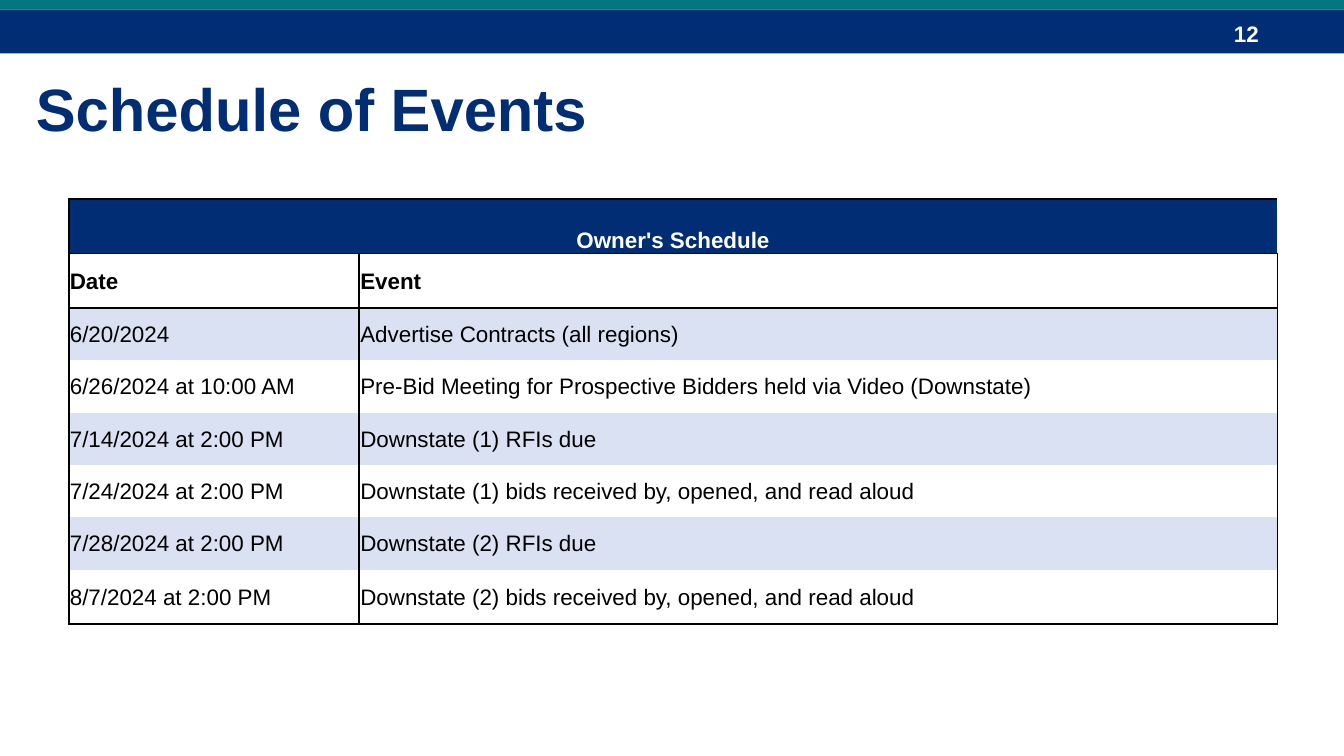
import pptx
import pptx.dml.color
import pptx.enum.shapes
import pptx.enum.text
import pptx.oxml.ns
import pptx.util
from lxml import etree
from pptx.util import Cm

COLORS = {
    "navy": "002D73",
    "teal": "007681",
    "white": "FFFFFF",
    "black": "000000",
    "band": "D9E1F2",
}
FONT = "Arial"
SLIDE_WIDTH, SLIDE_HEIGHT = Cm(25.4), Cm(14.29)
COLUMN_WIDTHS = (5.49, 17.35)
TALL_ROW, EVENT_ROW = 1.03, 0.99

TABLE_TITLE = "Owner's Schedule"
HEADINGS = ("Date", "Event")
EVENTS = [
    ("6/20/2024", "Advertise Contracts (all regions)"),
    ("6/26/2024 at 10:00 AM",
     "Pre-Bid Meeting for Prospective Bidders held via Video (Downstate)"),
    ("7/14/2024 at 2:00 PM", "Downstate (1) RFIs due"),
    ("7/24/2024 at 2:00 PM",
     "Downstate (1) bids received by, opened, and read aloud"),
    ("7/28/2024 at 2:00 PM", "Downstate (2) RFIs due"),
    ("8/7/2024 at 2:00 PM",
     "Downstate (2) bids received by, opened, and read aloud"),
]


def rgb(color):
    return pptx.dml.color.RGBColor.from_string(COLORS[color])


def add_run(paragraph, text, size, color, bold=False):
    run = paragraph.add_run()
    run.text = text
    run.font.name = FONT
    run.font.size = pptx.util.Pt(size)
    run.font.bold = bold
    run.font.color.rgb = rgb(color)


def add_bar(slide, top, height, color):
    """Draw a plain band across the full slide width."""
    bar = slide.shapes.add_shape(
        pptx.enum.shapes.MSO_SHAPE.RECTANGLE, 0, Cm(top), SLIDE_WIDTH, Cm(height))
    bar.shadow.inherit = False
    bar.fill.solid()
    bar.fill.fore_color.rgb = rgb(color)
    bar.line.fill.background()


def add_label(slide, left, top, width, height, text, size, color):
    label = slide.shapes.add_textbox(Cm(left), Cm(top), Cm(width), Cm(height))
    frame = label.text_frame
    frame.word_wrap = True
    frame.vertical_anchor = pptx.enum.text.MSO_ANCHOR.MIDDLE
    add_run(frame.paragraphs[0], text, size, color, bold=True)


def set_borders(cell, sides):
    """Rule the given sides (letters of LRTB) in black and clear the others."""
    properties = cell._tc.get_or_add_tcPr()
    qn = pptx.oxml.ns.qn
    for side in "LRTB":
        line = etree.SubElement(properties, qn(f"a:ln{side}"), w="12700")
        if side in sides:
            fill = etree.SubElement(line, qn("a:solidFill"))
            etree.SubElement(fill, qn("a:srgbClr"), val=COLORS["black"])
        else:
            etree.SubElement(line, qn("a:noFill"))


def fill_cell(cell, text, borders, background=None, color="black", bold=False):
    set_borders(cell, borders)
    if background:
        cell.fill.solid()
        cell.fill.fore_color.rgb = rgb(background)
    else:
        cell.fill.background()
    cell.margin_left = cell.margin_right = cell.margin_top = Cm(0.02)
    cell.margin_bottom = 0
    cell.vertical_anchor = pptx.enum.text.MSO_ANCHOR.MIDDLE
    if text:
        add_run(cell.text_frame.paragraphs[0], text, 12, color, bold)


def add_schedule(slide):
    heights = [TALL_ROW] * 2 + [EVENT_ROW] * (len(EVENTS) - 1) + [TALL_ROW]
    schedule = slide.shapes.add_table(
        len(heights), len(COLUMN_WIDTHS), Cm(1.3), Cm(3.76),
        Cm(sum(COLUMN_WIDTHS)), Cm(sum(heights))).table
    schedule.first_row = schedule.horz_banding = False
    for column, width in zip(schedule.columns, COLUMN_WIDTHS):
        column.width = Cm(width)
    for row, height in zip(schedule.rows, heights):
        row.height = Cm(height)

    banner = schedule.cell(0, 0)
    banner.merge(schedule.cell(0, 1))
    fill_cell(banner, TABLE_TITLE, "LTB", "navy", "white", bold=True)
    fill_cell(schedule.cell(0, 1), "", "TB", "navy")
    banner.vertical_anchor = pptx.enum.text.MSO_ANCHOR.BOTTOM
    banner.text_frame.paragraphs[0].alignment = pptx.enum.text.PP_ALIGN.CENTER

    for column, heading in enumerate(HEADINGS):
        fill_cell(schedule.cell(1, column), heading, "LRTB", bold=True)
    for index, event in enumerate(EVENTS):
        borders = "LR"
        if index == 0:
            borders += "T"
        if index == len(EVENTS) - 1:
            borders += "B"
        background = "band" if index % 2 == 0 else None
        for column, text in enumerate(event):
            fill_cell(schedule.cell(index + 2, column), text, borders, background)


def main():
    presentation = pptx.Presentation()
    presentation.slide_width = SLIDE_WIDTH
    presentation.slide_height = SLIDE_HEIGHT
    slide = presentation.slides.add_slide(presentation.slide_layouts[6])

    add_bar(slide, 0.18, 0.83, "navy")
    add_label(slide, 23.07, 0.25, 1.9, 0.76, "12", 12, "white")
    add_bar(slide, -0.05, 0.23, "teal")
    add_label(slide, 0.43, 1.22, 24.13, 1.63, "Schedule of Events", 32, "navy")
    add_schedule(slide)
    presentation.save("out.pptx")


if __name__ == "__main__":
    main()
